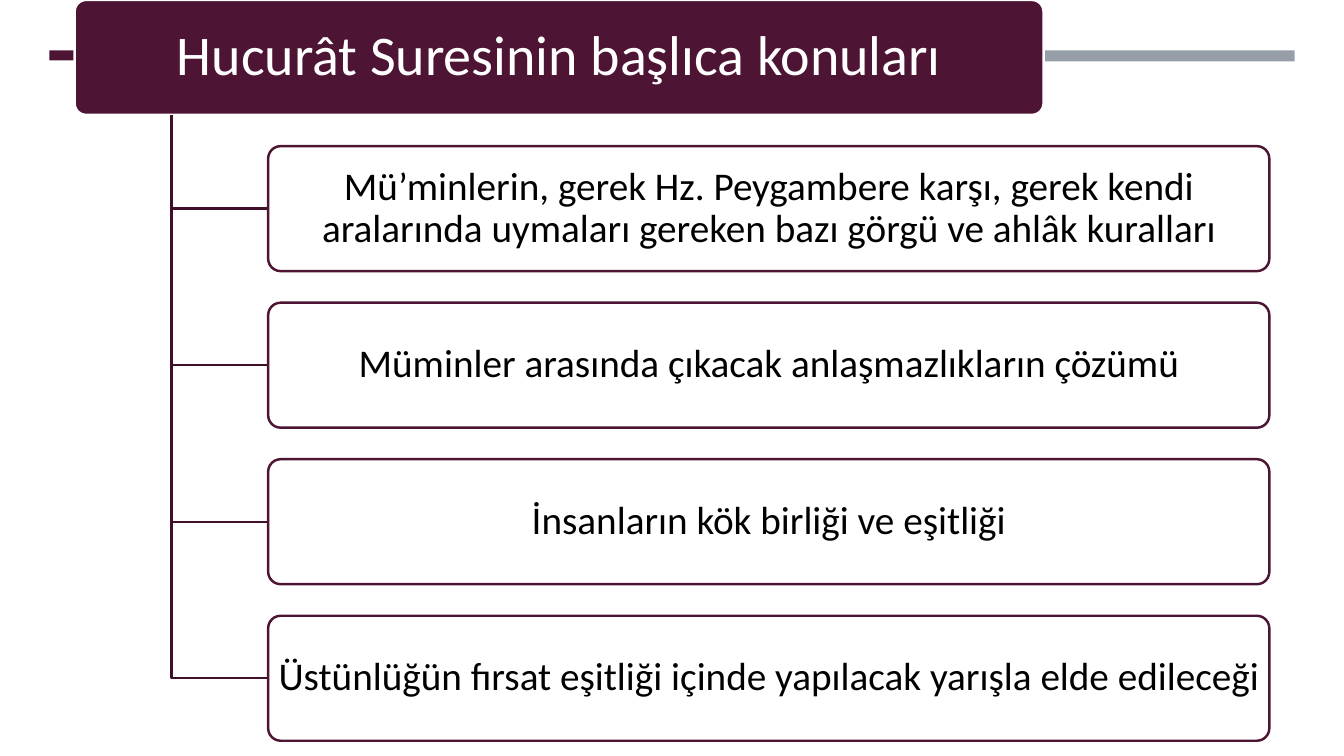
from lxml.etree import SubElement
from pptx import Presentation
from pptx.dml.color import RGBColor
from pptx.enum.shapes import MSO_SHAPE
from pptx.enum.text import MSO_ANCHOR, MSO_AUTO_SIZE, PP_ALIGN
from pptx.oxml.ns import qn
from pptx.util import Inches, Pt

# Content
TITLE = "Hucurât Suresinin başlıca konuları"
TOPICS = [
    "Mü’minlerin, gerek Hz. Peygambere karşı, gerek kendi aralarında uymaları gereken bazı görgü ve ahlâk kuralları",
    "Müminler arasında çıkacak anlaşmazlıkların çözümü",
    "İnsanların kök birliği ve eşitliği",
    "Üstünlüğün fırsat eşitliği içinde yapılacak yarışla elde edileceği",
]

# Style
PLUM = RGBColor(0x4D, 0x14, 0x34)
DARK_PLUM = RGBColor(0x3E, 0x10, 0x2A)
GREY = RGBColor(0x96, 0x9F, 0xA7)
WHITE = RGBColor(0xFF, 0xFF, 0xFF)
BLACK = RGBColor(0x00, 0x00, 0x00)
FONT = "Calibri"
LINE_WIDTH = Pt(1.75)

# Layout in inches
BARS = [(0.49, 0.1, PLUM), (8.79, 0.11, GREY)]  # left, height, colour
BAR_TOP, BAR_WIDTH = 0.5, 4.05
HEADER_LEFT, HEADER_WIDTH, HEADER_HEIGHT = 0.74, 9.61, 1.14
TRUNK_LEFT = HEADER_LEFT + HEADER_WIDTH / 10
BOX_LEFT, BOX_WIDTH, BOX_HEIGHT = 2.66, 9.93, 1.24
FIRST_TOP, ROW_STEP = 1.45, 1.553


def add_box(shapes, kind, left, top, width, height, fill, line=None):
    shape = shapes.add_shape(kind, Inches(left), Inches(top), Inches(width), Inches(height))
    shape.shadow.inherit = False
    shape.fill.solid()
    shape.fill.fore_color.rgb = fill
    if line is None:
        shape.line.fill.background()
    else:
        shape.line.color.rgb = line
        shape.line.width = LINE_WIDTH
    if kind == MSO_SHAPE.ROUNDED_RECTANGLE:
        shape.adjustments[0] = 0.1
    return shape


def write_text(shape, text, size, color, inset_x, inset_y):
    frame = shape.text_frame
    frame.text = text
    frame.word_wrap = True
    frame.auto_size = MSO_AUTO_SIZE.NONE
    frame.vertical_anchor = MSO_ANCHOR.MIDDLE
    frame.margin_left = frame.margin_right = Inches(inset_x)
    frame.margin_top = frame.margin_bottom = Inches(inset_y)
    paragraph = frame.paragraphs[0]
    paragraph.alignment = PP_ALIGN.CENTER
    paragraph.line_spacing = 0.9
    font = paragraph.runs[0].font
    font.name, font.size, font.color.rgb = FONT, Pt(size), color


def add_branch(shapes, middle):
    builder = shapes.build_freeform(Inches(TRUNK_LEFT), Inches(HEADER_HEIGHT))
    corners = [(TRUNK_LEFT, middle), (BOX_LEFT, middle)]
    builder.add_line_segments([(Inches(x), Inches(y)) for x, y in corners], close=False)
    branch = builder.convert_to_shape()
    branch.shadow.inherit = False
    branch.fill.background()
    branch.line.color.rgb = DARK_PLUM
    branch.line.width = LINE_WIDTH


presentation = Presentation()
presentation.slide_width, presentation.slide_height = Inches(13.33), Inches(7.5)
slide = presentation.slides.add_slide(presentation.slide_layouts[5])
shapes = slide.shapes

# Decorative bars behind the header
for left, height, color in BARS:
    add_box(shapes, MSO_SHAPE.RECTANGLE, left, BAR_TOP, BAR_WIDTH, height, color)

# Header box with the title placeholder in front of it
header = add_box(shapes, MSO_SHAPE.ROUNDED_RECTANGLE, HEADER_LEFT, 0,
                 HEADER_WIDTH, HEADER_HEIGHT, PLUM, WHITE)
title = shapes.title
title.left, title.top, title.width, title.height = (
    header.left, header.top, header.width, header.height)
write_text(title, TITLE, 40, WHITE, 0.11, 0.1)
header.element.addnext(title.element)

# Topic boxes, each hanging from the trunk
for row, topic in enumerate(TOPICS):
    top = FIRST_TOP + row * ROW_STEP
    add_branch(shapes, top + BOX_HEIGHT / 2)
    box = add_box(shapes, MSO_SHAPE.ROUNDED_RECTANGLE, BOX_LEFT, top,
                  BOX_WIDTH, BOX_HEIGHT, WHITE, PLUM)
    fill_color = box.element.spPr.find(qn("a:solidFill")).find(qn("a:srgbClr"))
    SubElement(fill_color, qn("a:alpha"), val="90000")
    write_text(box, topic, 28, BLACK, 0.06, 0.04)

presentation.save("out.pptx")
